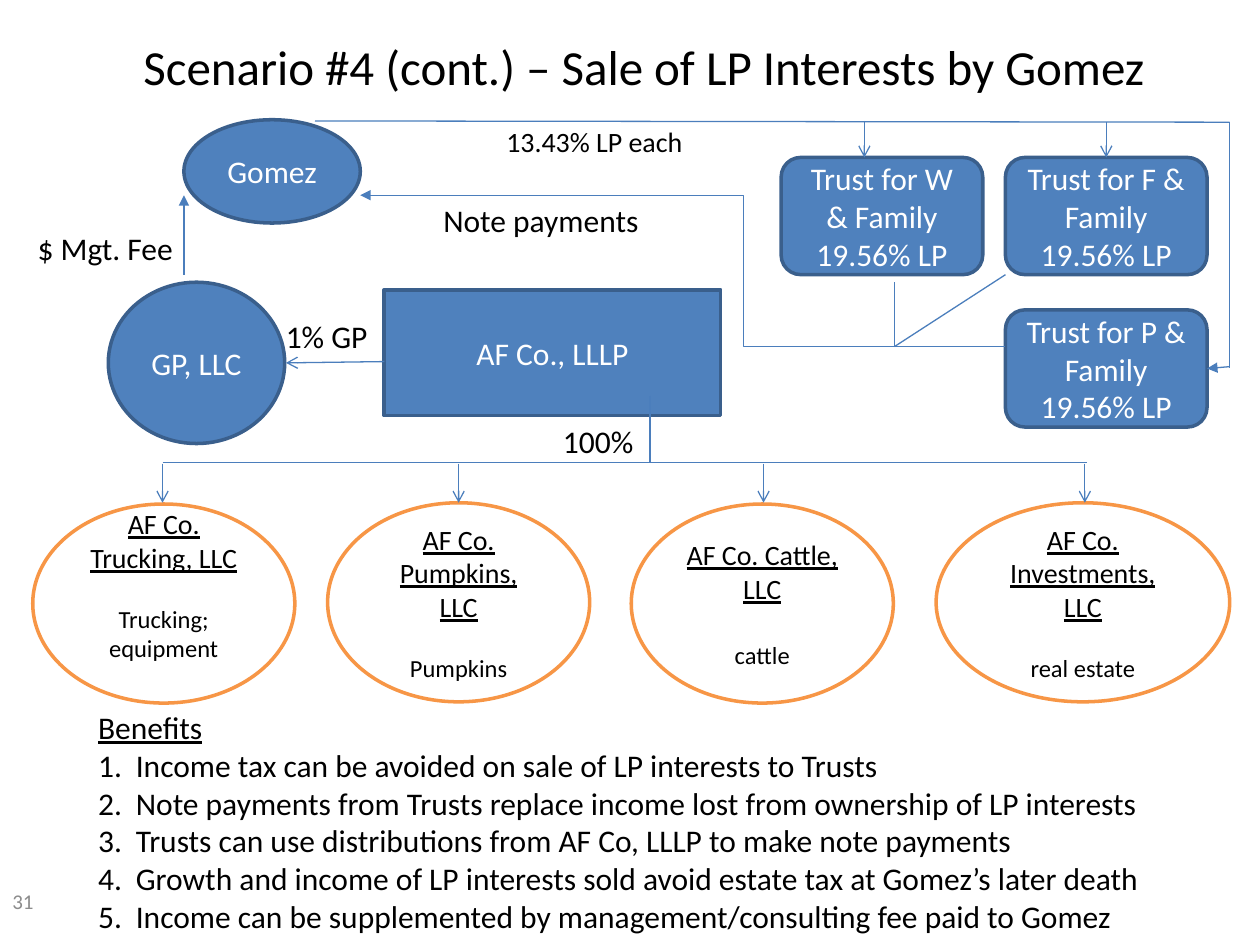
from dataclasses import dataclass

from lxml import etree
from pptx import Presentation
from pptx.dml.color import RGBColor
from pptx.enum.shapes import MSO_CONNECTOR, MSO_SHAPE
from pptx.enum.text import MSO_ANCHOR, MSO_AUTO_SIZE, PP_ALIGN
from pptx.oxml.ns import qn
from pptx.util import Pt

EMU_PER_PX = 9144  # 100 px to the inch
RECTANGLE, ROUNDED, ELLIPSE = MSO_SHAPE.RECTANGLE, MSO_SHAPE.ROUNDED_RECTANGLE, MSO_SHAPE.OVAL
STRAIGHT, ELBOW = MSO_CONNECTOR.STRAIGHT, MSO_CONNECTOR.ELBOW
MIDDLE, TOP = MSO_ANCHOR.MIDDLE, MSO_ANCHOR.TOP
LEFT, CENTER = PP_ALIGN.LEFT, PP_ALIGN.CENTER
FIT_SHAPE = MSO_AUTO_SIZE.SHAPE_TO_FIT_TEXT
TOP_SIDE, RIGHT_SIDE = 0, 3


@dataclass(frozen=True)
class Theme:
    font: str = "Calibri"
    ink: str = "000000"
    paper: str = "FFFFFF"
    entity: str = "4F81BD"
    entity_edge: str = "3A5F8C"
    subsidiary_edge: str = "F79646"
    connector: str = "4B7EBC"
    muted: str = "8C8C8C"
    title_size: int = 28
    body_size: int = 18
    label_size: int = 16
    detail_size: int = 14
    number_size: int = 12
    edge_width: float = 2
    connector_width: float = 0.75


def px(length):
    return round(length * EMU_PER_PX)


def rgb(color):
    return RGBColor.from_string(color)


class SlideBuilder:
    def __init__(self, slide, theme):
        self.slide = slide
        self.theme = theme

    def set_text(self, para, text, size, color, align=LEFT, underline=False):
        para.text = text
        para.alignment = align
        font = para.font
        font.name, font.size, font.underline = self.theme.font, Pt(size), underline
        font.color.rgb = rgb(color)

    def label(self, text, place, size=None, color=None, align=LEFT, anchor=TOP):
        box = self.slide.shapes.add_textbox(*map(px, place))
        frame = box.text_frame
        frame.word_wrap = True
        frame.vertical_anchor = anchor
        if anchor == TOP:
            frame.auto_size = FIT_SHAPE
        self.set_text(frame.paragraphs[0], text, size or self.theme.body_size,
                      color or self.theme.ink, align)
        return box

    def outlined(self, kind, place, fill, edge):
        shape = self.slide.shapes.add_shape(kind, *map(px, place))
        shape.shadow.inherit = False
        shape.fill.solid()
        shape.fill.fore_color.rgb = rgb(fill)
        shape.line.color.rgb = rgb(edge)
        shape.line.width = Pt(self.theme.edge_width)
        shape.text_frame.word_wrap = True
        shape.text_frame.vertical_anchor = MIDDLE
        return shape

    def entity(self, kind, place, *lines):
        theme = self.theme
        shape = self.outlined(kind, place, theme.entity, theme.entity_edge)
        frame = shape.text_frame
        for index, line in enumerate(lines):
            para = frame.add_paragraph() if index else frame.paragraphs[0]
            self.set_text(para, line, theme.body_size, theme.paper, CENTER)
        return shape

    def subsidiary(self, place, name, business, gap, lift):
        """Draw a company: gap in points splits its lines, lift in px raises them."""
        theme = self.theme
        shape = self.outlined(ELLIPSE, place, theme.paper, theme.subsidiary_edge)
        frame = shape.text_frame
        frame.margin_bottom = px(5 + lift)
        self.set_text(frame.paragraphs[0], name, theme.label_size, theme.ink, CENTER, True)
        detail = frame.add_paragraph()
        self.set_text(detail, business, theme.detail_size, theme.ink, CENTER)
        detail.space_before = Pt(gap)

    def connector(self, start, end, head=None, kind=STRAIGHT, target=None, side=TOP_SIDE):
        line = self.slide.shapes.add_connector(kind, *map(px, start + end))
        line.line.color.rgb = rgb(self.theme.connector)
        line.line.width = Pt(self.theme.connector_width)
        properties = line._element.spPr
        if head:
            etree.SubElement(properties.find(qn("a:ln")), qn("a:tailEnd"), type=head)
        etree.SubElement(properties, qn("a:effectLst"))
        if target is not None:
            line.end_connect(target, side)
        return line

    def elbow(self, start, end, bend, head):
        """Bend sits at the given share of the run, in thousandths of a percent."""
        line = self.connector(start, end, head, ELBOW)
        geometry = line._element.spPr.find(qn("a:prstGeom"))
        guides = geometry.find(qn("a:avLst"))
        if guides is None:
            guides = etree.SubElement(geometry, qn("a:avLst"))
        etree.SubElement(guides, qn("a:gd"), name="adj1", fmla=f"val {bend}")

    def numbered_list(self, heading, items, place, indent):
        frame = self.label(heading, place).text_frame
        frame.paragraphs[0].font.underline = True
        for item in items:
            para = frame.add_paragraph()
            self.set_text(para, item, self.theme.body_size, self.theme.ink)
            properties = para._p.get_or_add_pPr()
            properties.set("marL", str(px(indent)))
            properties.set("indent", str(-px(indent)))
            numbering = etree.Element(qn("a:buAutoNum"), type="arabicPeriod")
            properties.insert(0, numbering)


SUBSIDIARIES = [  # place, name, business, gap, lift, arrow x
    ((26, 400, 208, 158), "AF Co. Trucking, LLC", "Trucking; equipment", 17, 30, 129),
    ((260, 399, 208, 158), "AF Co. Pumpkins, LLC", "Pumpkins", 17, 0, 364),
    ((501, 400, 208, 158), "AF Co. Cattle, LLC", "cattle", 20, 0, 606),
    ((743, 399, 233, 158), "AF Co. Investments, LLC", "real estate", 17, 0, 861),
]
TRUSTS = {"W": (620, 125), "F": (798, 125), "P": (798, 246)}
BENEFITS = [
    "Income tax can be avoided on sale of LP interests to Trusts",
    "Note payments from Trusts replace income lost from ownership of LP interests",
    "Trusts can use distributions from AF Co, LLLP to make note payments",
    "Growth and income of LP interests sold avoid estate tax at Gomez’s later death",
    "Income can be supplemented by management/consulting fee paid to Gomez",
]


def main():
    deck = Presentation()
    deck.slide_width, deck.slide_height = px(1000), px(750)
    theme = Theme()
    page = SlideBuilder(deck.slides.add_slide(deck.slide_layouts[6]), theme)

    page.label("Scenario #4 (cont.) – Sale of LP Interests by Gomez", (61, 8, 900, 88),
               theme.title_size, align=CENTER, anchor=MIDDLE)

    page.entity(RECTANGLE, (305, 230, 267, 100), "AF Co., LLLP")
    page.entity(ELLIPSE, (86, 224, 140, 128), "GP, LLC")
    page.entity(ELLIPSE, (146, 95, 140, 82), "Gomez")
    trusts = {
        name: page.entity(ROUNDED, corner + (160, 93), f"Trust for {name} & Family", "19.56% LP")
        for name, corner in TRUSTS.items()
    }

    # Ownership of the four companies
    page.connector((516, 314), (516, 367))
    page.connector((129, 367), (863, 367))
    for place, name, business, gap, lift, arrow_x in SUBSIDIARIES:
        page.subsidiary(place, name, business, gap, lift)
        page.connector((arrow_x, 368), (arrow_x, 399), "arrow")

    # General partner interest and management fee
    page.connector((305, 287), (227, 288), "arrow")
    page.connector((146, 218), (146, 155), "triangle")

    # Sale of interests to the trusts
    page.connector((250, 96), (976, 97))
    page.connector((976, 97), (976, 292))
    page.connector((976, 291), (958, 293), "triangle", target=trusts["P"], side=RIGHT_SIDE)
    page.connector((686, 96), (686, 125), "arrow")
    page.connector((878, 97), (878, 125), "arrow", target=trusts["F"], side=TOP_SIDE)

    # Note payments back to Gomez
    junction = (710, 275)
    for source in ((710, 224), (798, 218), (798, 275)):
        page.connector(junction, source)
    page.elbow(junction, (286, 155), 28200, "triangle")

    page.label("100%", (437, 330, 96, 40))
    page.label("1% GP", (217, 247, 100, 40))
    page.label("$ Mgt. Fee", (20, 177, 132, 40))
    page.label("Note payments", (342, 155, 191, 40))
    page.label("13.43% LP each", (392, 94, 177, 37), theme.label_size)
    page.numbered_list("Benefits", BENEFITS, (68, 557, 889, 192), indent=30)
    page.label("31", (0, 695, 233, 40), theme.number_size, theme.muted, anchor=MIDDLE)

    deck.save("out.pptx")


if __name__ == "__main__":
    main()
